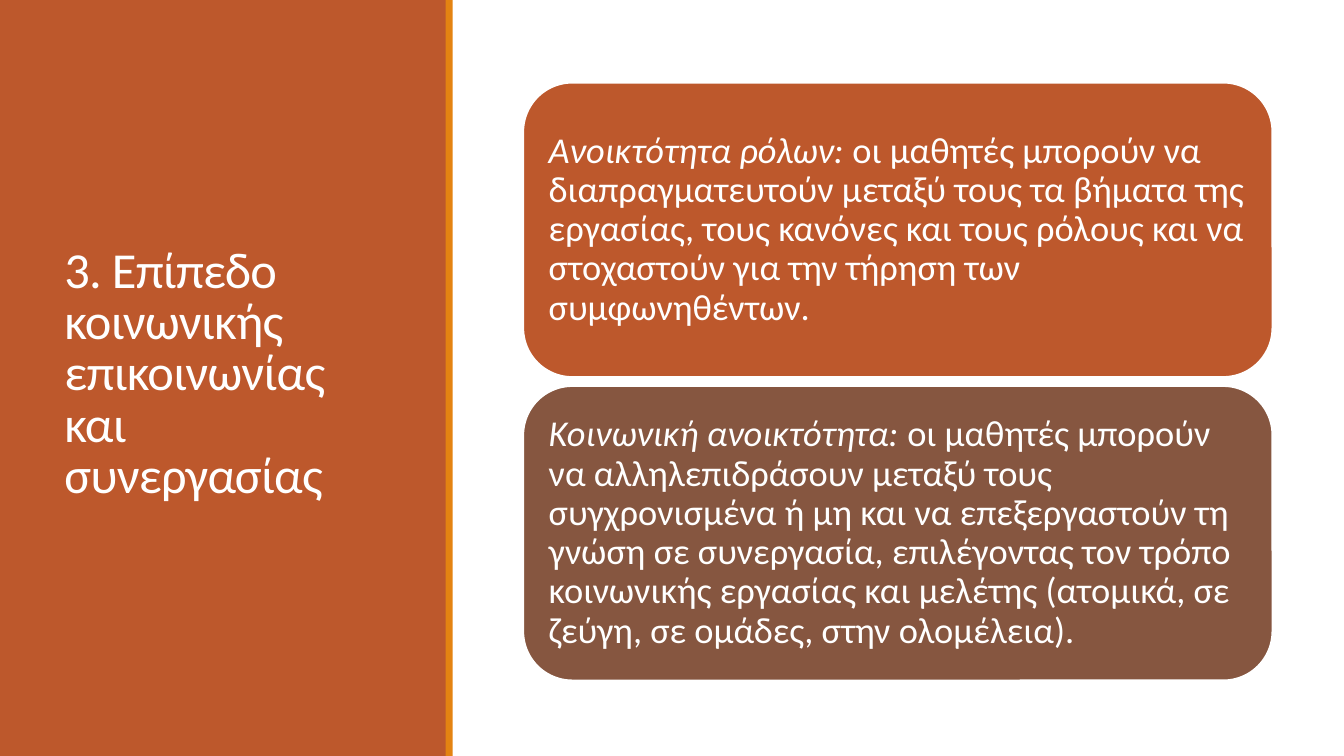
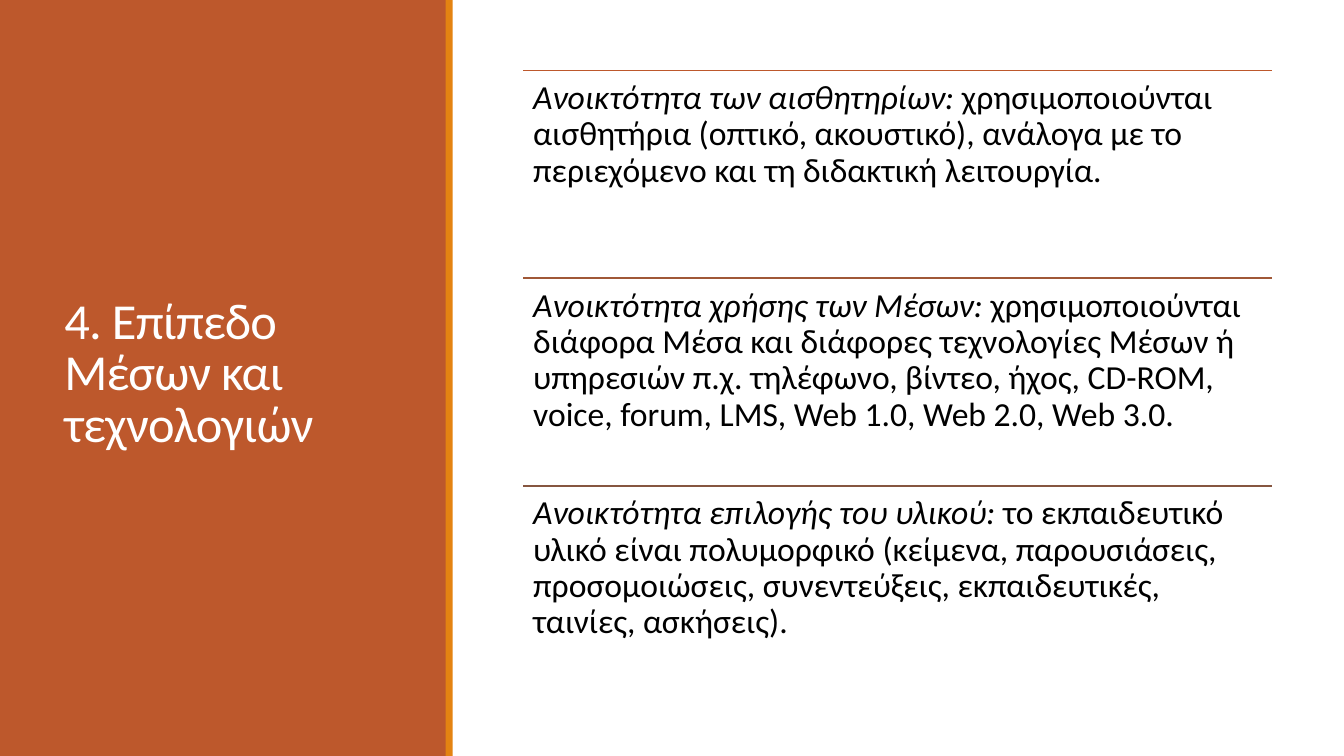
import pptx
import pptx.util
import pptx.dml.color
import pptx.enum.shapes
import pptx.enum.text
import pptx.oxml.ns
import lxml.etree
from pptx.util import Inches

THEME = {
    "font": "Calibri",
    "rust": "BD582C",
    "orange": "E48312",
    "sienna": "A05837",
    "brown": "865640",
    "white": "FFFFFF",
    "black": "000000",
    "title_size": 36,
    "card_size": 26,
    "row_size": 24,
    "line_width": 1.25,
}
SHAPES = pptx.enum.shapes.MSO_SHAPE
ANCHOR = pptx.enum.text.MSO_ANCHOR
SLIDE_W, SLIDE_H = 13.33, 7.5
CONTENT_LEFT, CONTENT_W = 5.19, 7.43


def add_block(slide, kind, left, top, width, height, color, outline=None):
    block = slide.shapes.add_shape(kind, Inches(left), Inches(top), Inches(width), Inches(height))
    block.shadow.inherit = False
    block.fill.solid()
    block.fill.fore_color.rgb = pptx.dml.color.RGBColor.from_string(THEME[color])
    if outline:
        block.line.color.rgb = pptx.dml.color.RGBColor.from_string(THEME[outline])
        block.line.width = pptx.util.Pt(THEME["line_width"])
    else:
        block.line.fill.background()
    return block


def write_text(frame, lead, rest, size, color, inset, anchor, spacing):
    frame.word_wrap = True
    frame.vertical_anchor = anchor
    frame.margin_left = frame.margin_right = Inches(inset)
    frame.margin_top = frame.margin_bottom = Inches(inset)
    paragraph = frame.paragraphs[0]
    paragraph.text = lead
    paragraph.alignment = pptx.enum.text.PP_ALIGN.LEFT
    paragraph.line_spacing = spacing
    if rest:
        paragraph.runs[0].font.italic = True
        paragraph.add_run().text = rest
    for run in paragraph.runs:
        run.font.name = THEME["font"]
        run.font.size = pptx.util.Pt(THEME[size])
        run.font.color.rgb = pptx.dml.color.RGBColor.from_string(THEME[color])


presentation = pptx.Presentation()
presentation.slide_width = Inches(SLIDE_W)
presentation.slide_height = Inches(SLIDE_H)

levels = []
for heading in (
    "3. Επίπεδο κοινωνικής επικοινωνίας και συνεργασίας",
    "4. Επίπεδο Μέσων και τεχνολογιών",
):
    level = presentation.slides.add_slide(presentation.slide_layouts[6])
    add_block(level, SHAPES.RECTANGLE, 0, 0, 4.43, SLIDE_H, "rust")
    title = level.shapes.add_textbox(Inches(0.54), Inches(0.57), Inches(3.37), Inches(6.31))
    write_text(title.text_frame, heading, "", "title_size", "white", 0.1, ANCHOR.MIDDLE, 0.85)
    title.text_frame.paragraphs[0].runs[0].font._element.set("spc", "-50")
    add_block(level, SHAPES.RECTANGLE, 4.42, 0, 0.07, SLIDE_H, "orange")
    levels.append(level)

communication, media = levels

CARD_TOP, CARD_H, CARD_GAP = 0.82, 2.92, 0.09
cards = [
    ("rust", "Ανοικτότητα ρόλων: ",
     "οι μαθητές μπορούν να διαπραγματευτούν μεταξύ τους τα βήματα της εργασίας, "
     "τους κανόνες και τους ρόλους και να στοχαστούν για την τήρηση των συμφωνηθέντων."),
    ("brown", "Κοινωνική ανοικτότητα: ",
     "οι μαθητές μπορούν να αλληλεπιδράσουν μεταξύ τους συγχρονισμένα ή μη και να "
     "επεξεργαστούν τη γνώση σε συνεργασία, επιλέγοντας τον τρόπο κοινωνικής εργασίας "
     "και μελέτης (ατομικά, σε ζεύγη, σε ομάδες, στην ολομέλεια)."),
]
for index, (color, lead, rest) in enumerate(cards):
    top = CARD_TOP + index * (CARD_H + CARD_GAP)
    card = add_block(communication, SHAPES.ROUNDED_RECTANGLE, CONTENT_LEFT, top,
                     CONTENT_W, CARD_H, color, "white")
    write_text(card.text_frame, lead, rest, "card_size", "white", 0.11, ANCHOR.MIDDLE, 0.9)

ROW_TOP, ROW_H = 0.7, 2.06
rows = [
    ("rust", "Ανοικτότητα των αισθητηρίων: ",
     "χρησιμοποιούνται αισθητήρια (οπτικό, ακουστικό), ανάλογα με το περιεχόμενο "
     "και τη διδακτική λειτουργία."),
    ("sienna", "Ανοικτότητα χρήσης των Μέσων: ",
     "χρησιμοποιούνται διάφορα Μέσα και διάφορες τεχνολογίες Μέσων ή υπηρεσιών π.χ. "
     "τηλέφωνο, βίντεο, ήχος, CD-ROM, voice, forum, LMS, Web 1.0, Web 2.0, Web 3.0."),
    ("brown", "Ανοικτότητα επιλογής του υλικού: ",
     "το εκπαιδευτικό υλικό είναι πολυμορφικό (κείμενα, παρουσιάσεις, προσομοιώσεις, "
     "συνεντεύξεις, εκπαιδευτικές, ταινίες, ασκήσεις)."),
]
for index, (color, lead, rest) in enumerate(rows):
    top = Inches(ROW_TOP + index * ROW_H)
    rule = media.shapes.add_connector(
        pptx.enum.shapes.MSO_CONNECTOR.STRAIGHT,
        Inches(CONTENT_LEFT), top, Inches(CONTENT_LEFT + CONTENT_W), top)
    rule.line.color.rgb = pptx.dml.color.RGBColor.from_string(THEME[color])
    rule.line.width = pptx.util.Pt(THEME["line_width"])
    lxml.etree.SubElement(rule._element.spPr, pptx.oxml.ns.qn("a:effectLst"))
    row = media.shapes.add_textbox(Inches(CONTENT_LEFT), top, Inches(CONTENT_W), Inches(ROW_H))
    write_text(row.text_frame, lead, rest, "row_size", "black", 0.1, ANCHOR.TOP, 0.9)

presentation.save("out.pptx")
